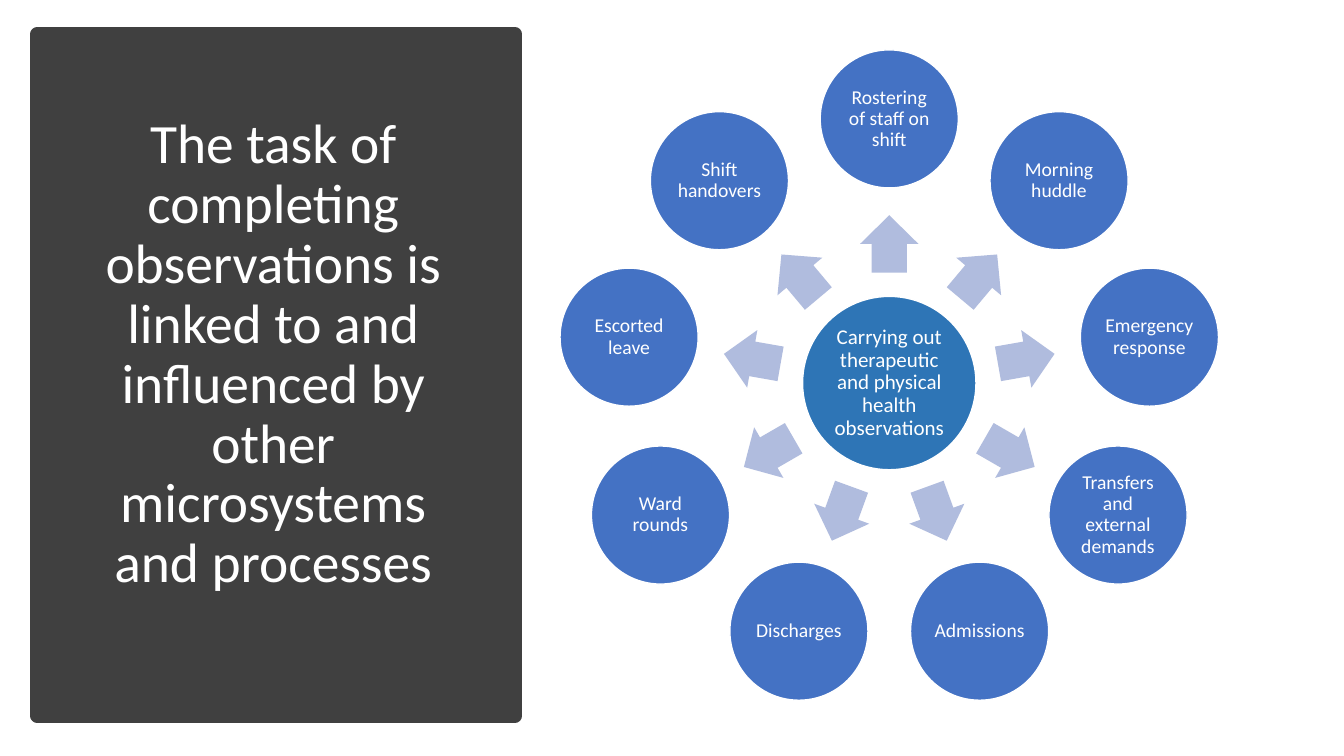
from math import cos, radians, sin

from pptx import Presentation
from pptx.dml.color import RGBColor
from pptx.enum.shapes import MSO_SHAPE
from pptx.enum.text import MSO_ANCHOR, MSO_AUTO_SIZE, PP_ALIGN
from pptx.util import Inches, Pt

RECTANGLE, OVAL, ARROW = MSO_SHAPE.RECTANGLE, MSO_SHAPE.OVAL, MSO_SHAPE.RIGHT_ARROW
MIDDLE, CENTER, NO_AUTOFIT = MSO_ANCHOR.MIDDLE, PP_ALIGN.CENTER, MSO_AUTO_SIZE.NONE
TITLE_ONLY = 5

COLORS = {"panel": "404040", "hub": "2E75B6", "process": "4472C4",
          "arrow": "B0BCDE", "white": "FFFFFF"}

TITLE = ("The task of completing observations is linked to and influenced by "
         "other microsystems and processes")
HUB = "Carrying out therapeutic and physical health observations"
PROCESSES = ["Rostering of staff on shift", "Morning huddle", "Emergency response",
             "Transfers and external demands", "Admissions", "Discharges",
             "Ward rounds", "Escorted leave", "Shift handovers"]

HUB_X, HUB_Y = 8.82, 3.8
HUB_SIZE, PROCESS_SIZE = 1.72, 1.37
PROCESS_RADIUS, ARROW_RADIUS = 2.62, 1.38
ARROW_W, ARROW_H = 0.57, 0.58


def rgb(name):
    return RGBColor.from_string(COLORS[name])


def set_text(sp, text, size, inset=None):
    tf = sp.text_frame
    frame = {"word_wrap": True, "auto_size": NO_AUTOFIT, "vertical_anchor": MIDDLE}
    if inset is not None:
        for side in ("left", "top", "right", "bottom"):
            frame[f"margin_{side}"] = Inches(inset)
    for name, value in frame.items():
        setattr(tf, name, value)
    p = tf.paragraphs[0]
    p.alignment, p.line_spacing = CENTER, 0.9
    r = p.add_run()
    r.text = text
    for name, value in {"name": "Calibri", "size": Pt(size), "bold": False}.items():
        setattr(r.font, name, value)
    r.font.color.rgb = rgb("white")


def add_filled(shapes, kind, box, fill, line=None, line_width=1):
    sp = shapes.add_shape(kind, *map(Inches, box))
    sp.shadow.inherit = False
    sp.fill.solid()
    sp.fill.fore_color.rgb = rgb(fill)
    if line:
        sp.line.color.rgb = rgb(line)
        sp.line.width = Pt(line_width)
    else:
        sp.line.fill.background()
    return sp


def centered_box(angle, radius, width, height):
    """Box whose centre lies at the given angle and distance from the hub."""
    x = HUB_X + radius * cos(radians(angle))
    y = HUB_Y + radius * sin(radians(angle))
    return x - width / 2, y - height / 2, width, height


def add_circle(shapes, text, angle, radius, diameter, fill, size):
    box = centered_box(angle, radius, diameter, diameter)
    sp = add_filled(shapes, OVAL, box, fill, "white")
    set_text(sp, text, size, inset=0.02)


def add_arrow(shapes, angle):
    box = centered_box(angle, ARROW_RADIUS, ARROW_W, ARROW_H)
    sp = add_filled(shapes, ARROW, box, "arrow")
    sp.adjustments[0], sp.adjustments[1] = 0.6, 0.5
    sp.rotation = angle


def add_title_panel(slide):
    title = slide.shapes.title
    box = map(Inches, (0.81, 0.81, 3.8, 5.43))
    for name, value in zip(("left", "top", "width", "height"), box):
        setattr(title, name, value)
    set_text(title, TITLE, 39.6)
    panel = add_filled(slide.shapes, RECTANGLE, (0.37, 0.34, 4.74, 6.76),
                       "panel", "panel", 10)
    title.element.addprevious(panel.element)  # keep the panel behind the title


def add_radial_diagram(slide):
    shapes = slide.shapes.add_group_shape().shapes
    add_circle(shapes, HUB, 0, 0, HUB_SIZE, "hub", 15)
    for i, process in enumerate(PROCESSES):
        angle = (270 + i * 360 / len(PROCESSES)) % 360
        add_arrow(shapes, angle)
        add_circle(shapes, process, angle, PROCESS_RADIUS, PROCESS_SIZE, "process", 14)


def main():
    prs = Presentation()
    prs.slide_width, prs.slide_height = Inches(13.33), Inches(7.5)
    slide = prs.slides.add_slide(prs.slide_layouts[TITLE_ONLY])
    add_title_panel(slide)
    add_radial_diagram(slide)
    prs.save("out.pptx")


if __name__ == "__main__":
    main()
